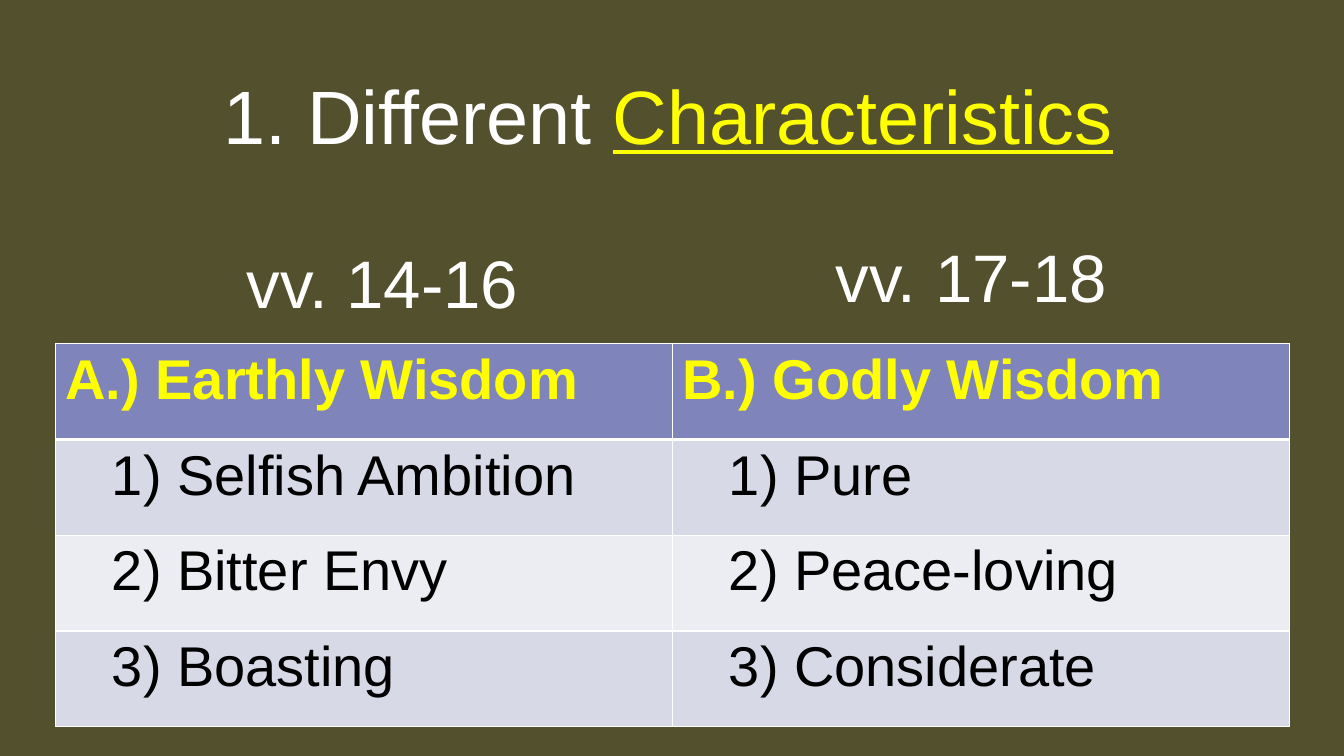
import pptx
import pptx.util
import pptx.dml.color
import pptx.enum.text
import lxml.etree

THEME = {
    "font": "Arial",
    "olive": "53502E", "white": "FFFFFF", "yellow": "FFFF00", "black": "000000",
    "header": "7F84BA", "bands": ("D8D9E7", "ECEDF3"),
    "title_size": 54, "verse_size": 48, "cell_size": 40,
}
DRAWING = "http://schemas.openxmlformats.org/drawingml/2006/main"

deck = pptx.Presentation()
deck.slide_width = pptx.util.Inches(13.33)
deck.slide_height = pptx.util.Inches(7.5)
page = deck.slides.add_slide(deck.slide_layouts[6])
page.background.fill.solid()
page.background.fill.fore_color.rgb = pptx.dml.color.RGBColor.from_string(THEME["olive"])


def place(left, top, width, height):
    """Turn percentages of the slide into lengths."""
    across, down = deck.slide_width / 100, deck.slide_height / 100
    return [int(length) for length in (left * across, top * down, width * across, height * down)]


def add_span(para, text, size, color, bold=False, underline=False):
    span = para.add_run()
    span.text = text
    span.font.name = THEME["font"]
    span.font.size = pptx.util.Pt(THEME[size])
    span.font.bold = bold
    span.font.underline = underline
    span.font.color.rgb = pptx.dml.color.RGBColor.from_string(THEME[color])


# Title and verse headings
headings = [
    ((2.85, 9.07, 93.7, 21.6), 0, "title_size",
     [("1. Different ", "white", False), ("Characteristics", "yellow", True)]),
    ((7.88, 31.2, 41.19, 12.13), 0.05, "verse_size", [("vv. 14-16", "white", False)]),
    ((53.71, 30.53, 37.13, 16.13), 0.05, "verse_size", [("vv. 17-18", "white", False)]),
]
for area, margin, size, spans in headings:
    frame = page.shapes.add_textbox(*place(*area)).text_frame
    frame.word_wrap = True
    frame.margin_top = frame.margin_bottom = pptx.util.Inches(margin)
    frame.margin_left = frame.margin_right = pptx.util.Inches(2 * margin)
    para = frame.paragraphs[0]
    para.alignment = pptx.enum.text.PP_ALIGN.CENTER
    for text, color, underline in spans:
        add_span(para, text, size, color, underline=underline)

# Comparison table
rows = [
    ("A.) Earthly Wisdom", "B.) Godly Wisdom"),
    ("1) Selfish Ambition", "1) Pure"),
    ("2) Bitter Envy", "2) Peace-loving"),
    ("3) Boasting", "3) Considerate"),
]
table = page.shapes.add_table(len(rows), 2, *place(4.13, 45.47, 91.82, 50.67)).table
for row, texts in enumerate(rows):
    is_header = row == 0
    fill = THEME["header"] if is_header else THEME["bands"][(row - 1) % 2]
    widths = {"lnL": 1, "lnR": 1, "lnT": 3 if row == 1 else 1, "lnB": 3 if is_header else 1}
    for column, text in enumerate(texts):
        cell = table.cell(row, column)

        # White borders, heavier under the header
        properties = cell._tc.get_or_add_tcPr()
        for side, width in widths.items():
            line = lxml.etree.SubElement(properties, f"{{{DRAWING}}}{side}",
                                         w=str(pptx.util.Pt(width)))
            solid = lxml.etree.SubElement(line, f"{{{DRAWING}}}solidFill")
            lxml.etree.SubElement(solid, f"{{{DRAWING}}}srgbClr", val=THEME["white"])

        cell.fill.solid()
        cell.fill.fore_color.rgb = pptx.dml.color.RGBColor.from_string(fill)
        cell.margin_left = pptx.util.Inches(0.1 if is_header else 0.56)
        add_span(cell.text_frame.paragraphs[0], text, "cell_size",
                 "yellow" if is_header else "black", bold=is_header)

deck.save("out.pptx")
